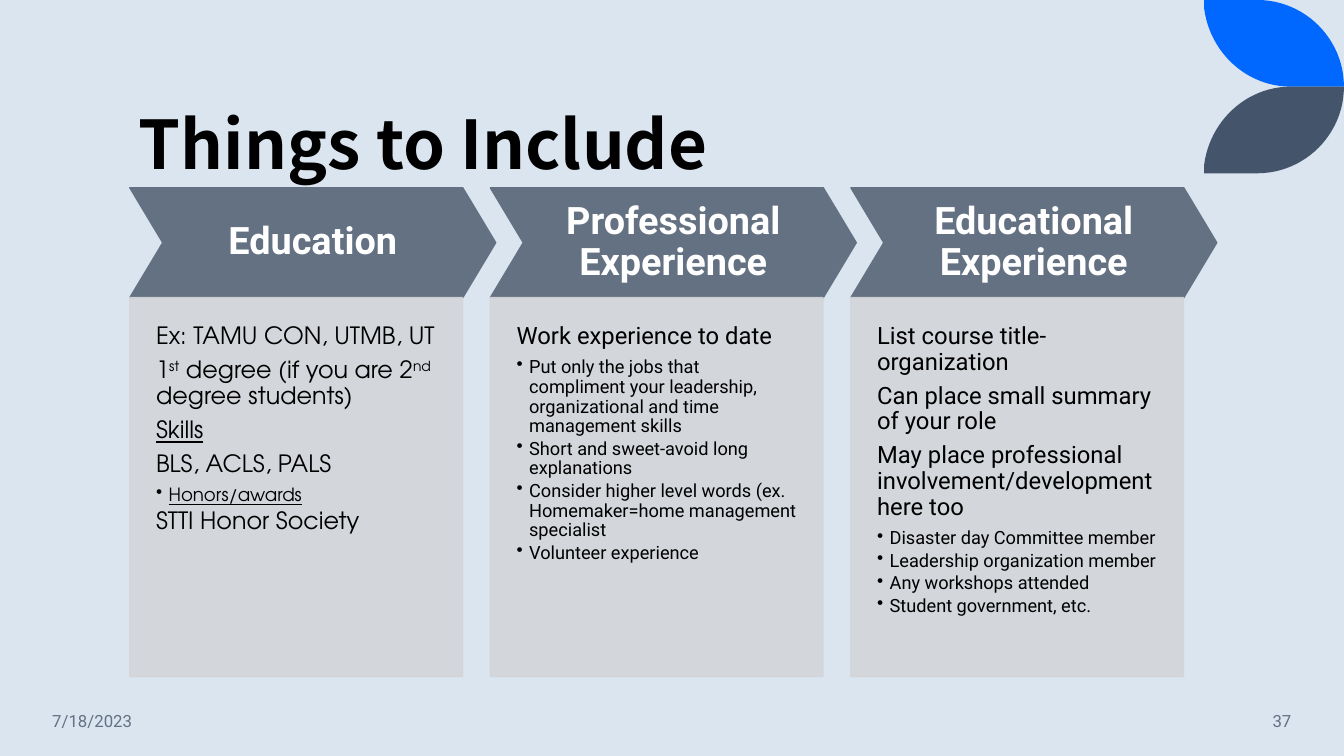
"""Builds the "Things to Include" slide: three chevron headings over text panels."""
from dataclasses import dataclass

import lxml.etree
import pptx
import pptx.dml.color
import pptx.enum.shapes
import pptx.enum.text
import pptx.oxml.ns
import pptx.util

COLS, ROWS = 160, 90
WIDE, HIGH = pptx.util.Inches(13.333), pptx.util.Inches(7.5)
HUES = {"back": "DAE5EF", "blue": "0068FF", "navy": "44546A",
        "slate": "637183", "panel": "D3D5D9", "black": "000000", "white": "FFFFFF"}
SANS, ROUND, HEAVY = "Roboto", "TeX Gyre Adventor", "Noto Sans CJK KR"
ALIGN, ANCHOR = pptx.enum.text.PP_ALIGN, pptx.enum.text.MSO_ANCHOR
SHAPE = pptx.enum.shapes.MSO_SHAPE
LEFT, STEP = 15.46, 42.92
TOP, BAND = 22.35, 13.08
qn = pptx.oxml.ns.qn


@dataclass
class Line:
    text: str
    bullet: bool = False
    under: bool = False


@dataclass
class Column:
    head: str
    font: str
    lines: list[Line]


@dataclass
class Label:
    text: str
    box: tuple[float, float, float, float]
    font: str
    size: float
    hue: str
    bold: bool = False
    align: int = ALIGN.LEFT
    anchor: int = ANCHOR.MIDDLE
    lead: float = 1.0


COLUMNS = [
    Column("Education", ROUND, [
        Line("Ex: TAMU CON, UTMB, UT"),
        Line("1^st^ degree (if you are 2^nd^ degree students)"),
        Line("Skills", under=True),
        Line("BLS, ACLS, PALS"),
        Line("Honors/awards", bullet=True, under=True),
        Line("STTI Honor Society")]),
    Column("Professional Experience", SANS, [
        Line("Work experience to date"),
        Line("Put only the jobs that compliment your leadership, "
             "organizational and time management skills", bullet=True),
        Line("Short and sweet-avoid long explanations", bullet=True),
        Line("Consider higher level words (ex. Homemaker=home management specialist", bullet=True),
        Line("Volunteer experience", bullet=True)]),
    Column("Educational Experience", SANS, [
        Line("List course title-organization"),
        Line("Can place small summary of your role"),
        Line("May place professional involvement/development here too"),
        Line("Disaster day Committee member", bullet=True),
        Line("Leadership organization member", bullet=True),
        Line("Any workshops attended", bullet=True),
        Line("Student government, etc.", bullet=True)]),
]
LABELS = [
    Label("Things to Include", (15.36, 5.04, 128.28, 17.4), HEAVY, 48, "black",
          bold=True, anchor=ANCHOR.BOTTOM, lead=0.9),
    Label("7/18/2023", (5.04, 83.4, 22.32, 4.8), SANS, 12, "slate"),
    Label("37", (133.2, 83.4, 21.72, 4.8), SANS, 12, "slate", align=ALIGN.RIGHT),
]


def across(cols: float) -> int:
    return round(WIDE * cols / COLS)


def down(rows: float) -> int:
    return round(HIGH * rows / ROWS)


def place(left: float, top: float, width: float, height: float) -> tuple[int, int, int, int]:
    return across(left), down(top), across(width), down(height)


def tint(hue: str) -> pptx.dml.color.RGBColor:
    return pptx.dml.color.RGBColor.from_string(HUES[hue])


def write(frame, text: str, *, font: str, size: float, hue: str, bold: bool = False,
          under: bool = False, bullet: bool = False, align: int = ALIGN.LEFT,
          lead: float = 0.9, after: float = 0) -> None:
    para = frame.paragraphs[0] if not frame.text else frame.add_paragraph()
    if bullet:
        props = para._p.get_or_add_pPr()
        props.set("marL", str(pptx.util.Inches(0.125)))
        props.set("indent", str(-pptx.util.Inches(0.125)))
        lxml.etree.SubElement(props, qn("a:buChar")).set("char", "•")
    para.alignment, para.line_spacing = align, lead
    para.space_after = pptx.util.Pt(after)
    for rank, part in enumerate(text.split("^")):
        run = para.add_run()
        run.text = part
        run.font.name, run.font.size = font, pptx.util.Pt(size)
        run.font.bold, run.font.underline = bold, under
        run.font.color.rgb = tint(hue)
        if rank % 2:
            run._r.get_or_add_rPr().set("baseline", "30000")


def frame_up(shape, anchor: int, inset: float | None = None, foot: float | None = None):
    frame = shape.text_frame
    frame.word_wrap, frame.vertical_anchor = True, anchor
    if inset is not None:
        frame.margin_left = frame.margin_top = frame.margin_right = pptx.util.Inches(inset)
        frame.margin_bottom = pptx.util.Inches(foot or inset)
    return frame


def paint(shape, hue: str, share: int = 100, edge: bool = True) -> None:
    shape.shadow.inherit = False
    shape.fill.solid()
    shape.fill.fore_color.rgb = tint(hue)
    if edge:
        shape.line.color.rgb = tint(hue)
        shape.line.width = pptx.util.Pt(1)
    else:
        shape.line.fill.background()
    if share < 100:
        for color in shape._element.spPr.iter(qn("a:srgbClr")):
            lxml.etree.SubElement(color, qn("a:alpha")).set("val", str(share * 1000))


def curve(knots: list[tuple[float, float]], steps: int = 24) -> list[tuple[float, float]]:
    points = []
    for step in range(steps + 1):
        t = step / steps
        parts = ((1 - t) ** 3, 3 * t * (1 - t) ** 2, 3 * t ** 2 * (1 - t), t ** 3)
        points.append(tuple(sum(p * knot[axis] for p, knot in zip(parts, knots))
                            for axis in (0, 1)))
    return points


def leaf(slide, hue: str, flip: bool) -> None:
    left, width, height = 143.36, 16.64, 10.32
    shares = [(0, 0), *curve([(0.38, 0), (0.72, 0), (1, 0.45), (1, 1)]),
              *curve([(0.62, 1), (0.3, 1), (0.04, 0.6), (0, 0.1)])]
    points = [(across(left + x * width), down(height * (2 - y if flip else y)))
              for x, y in shares]
    pen = slide.shapes.build_freeform(*points[0])
    pen.add_line_segments(points[1:], close=True)
    paint(pen.convert_to_shape(), hue, edge=False)


def label(slide, item: Label) -> None:
    box = slide.shapes.add_textbox(*place(*item.box))
    write(frame_up(box, item.anchor), item.text, font=item.font, size=item.size,
          hue=item.hue, bold=item.bold, align=item.align, lead=item.lead)


def column(slide, item: Column, left: float) -> None:
    head = slide.shapes.add_shape(SHAPE.CHEVRON, *place(left, TOP, 43.56, BAND))
    head.adjustments[0] = 0.3
    paint(head, "slate")
    write(frame_up(head, ANCHOR.MIDDLE, 0.13), item.head, font=SANS, size=27,
          hue="white", bold=True, align=ALIGN.CENTER)
    panel = slide.shapes.add_shape(SHAPE.RECTANGLE, *place(left, TOP + BAND, 39.6, 45.12))
    paint(panel, "panel", share=90)
    frame = frame_up(panel, ANCHOR.TOP, 0.26, foot=0.52)
    for line in item.lines:
        write(frame, line.text, font=item.font, size=13 if line.bullet else 17, hue="black",
              under=line.under, bullet=line.bullet, after=2 if line.bullet else 6)


def main() -> None:
    deck = pptx.Presentation()
    deck.slide_width, deck.slide_height = WIDE, HIGH
    slide = deck.slides.add_slide(deck.slide_layouts[6])
    slide.background.fill.solid()
    slide.background.fill.fore_color.rgb = tint("back")
    leaf(slide, "blue", flip=False)
    leaf(slide, "navy", flip=True)
    for item in LABELS:
        label(slide, item)
    for rank, item in enumerate(COLUMNS):
        column(slide, item, LEFT + rank * STEP)
    deck.save("out.pptx")


if __name__ == "__main__":
    main()
